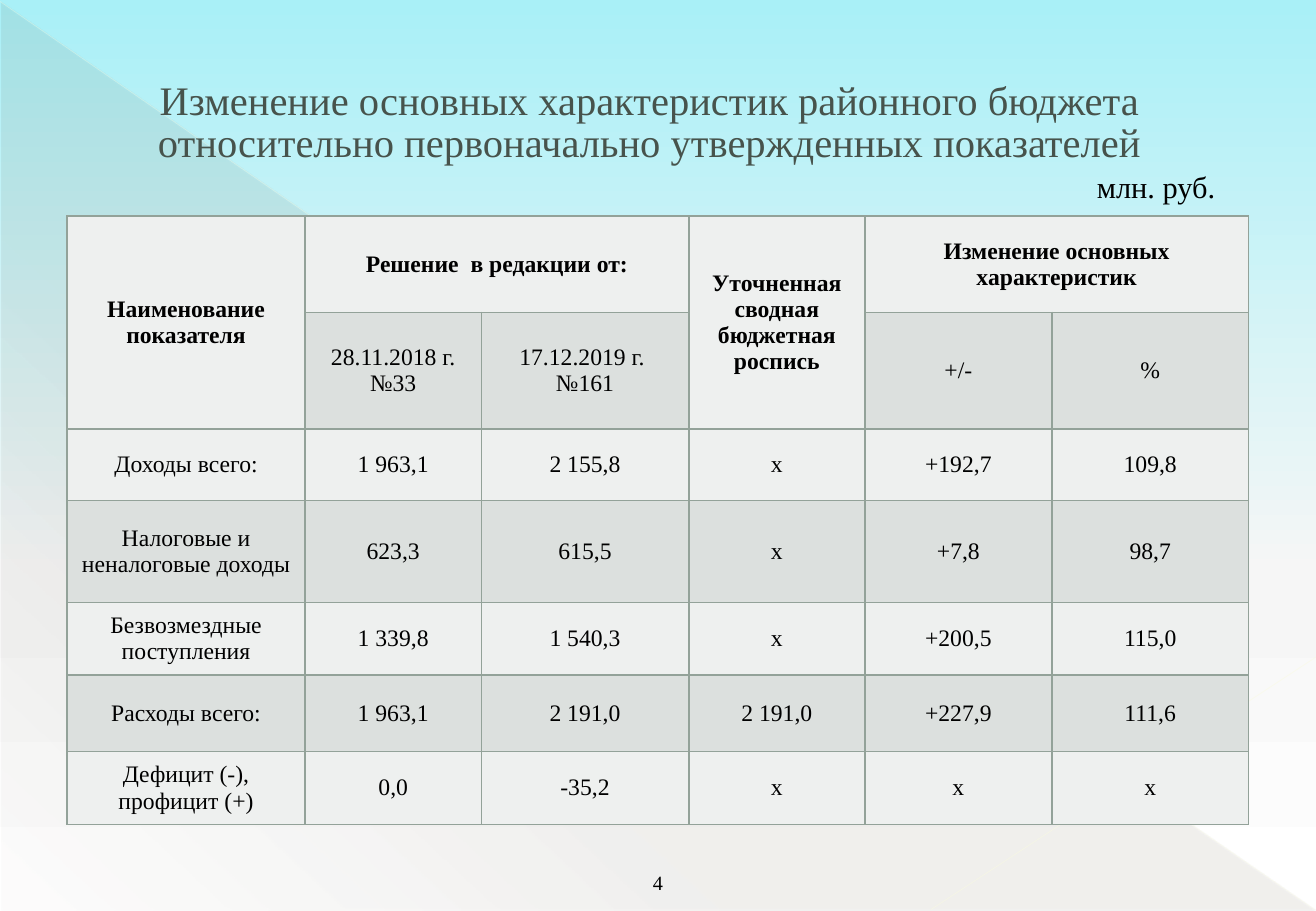
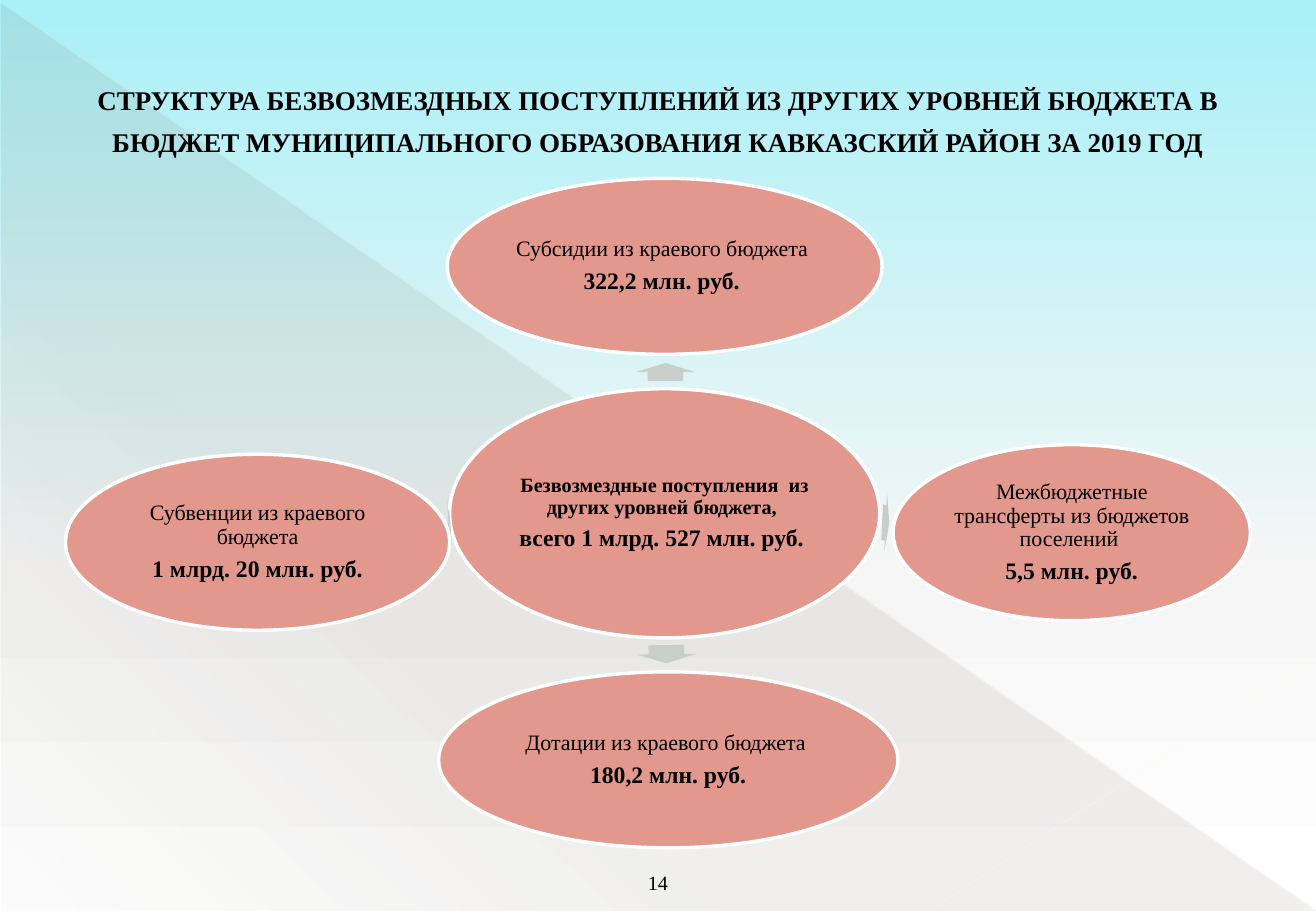
from pptx import Presentation
from pptx.dml.color import RGBColor
from pptx.enum.shapes import MSO_CONNECTOR, MSO_SHAPE
from pptx.enum.text import MSO_ANCHOR, MSO_AUTO_SIZE, PP_ALIGN
from pptx.oxml import parse_xml
from pptx.oxml.ns import nsdecls
from pptx.oxml.xmlchemy import OxmlElement
from pptx.util import Cm, Pt

FONT = "Times New Roman"
BLACK = RGBColor(0x00, 0x00, 0x00)
WHITE = RGBColor(0xFF, 0xFF, 0xFF)
SLATE = RGBColor(0x47, 0x53, 0x4C)
BORDER = RGBColor(0x93, 0xA2, 0x99)
ROW_FILLS = (RGBColor(0xEE, 0xF0, 0xEF), RGBColor(0xDC, 0xE0, 0xDE))
CORAL = RGBColor(0xE2, 0x98, 0x8C)
ARROW = RGBColor(0xC8, 0xCE, 0xCA)
CREAM = RGBColor(0xFB, 0xFC, 0xE0)
BROWN = RGBColor(0x56, 0x4B, 0x3C)
SKY = RGBColor(0xA9, 0xF0, 0xF7)
MIST = RGBColor(0xF6, 0xF6, 0xF6)

COLUMN_WIDTHS = (4.98, 3.68, 4.34, 3.68, 3.91, 4.11)
ROW_HEIGHTS = (2.01, 2.43, 1.5, 2.13, 1.52, 1.6, 1.52)
MERGES = (((0, 0), (1, 0)), ((0, 1), (0, 2)), ((0, 3), (1, 3)), ((0, 4), (0, 5)))
BUDGET_ROWS = (
    ("Наименование показателя", "Решение  в редакции от:", "",
     "Уточненная сводная бюджетная роспись", "Изменение основных характеристик", ""),
    ("", "28.11.2018 г. №33", "17.12.2019 г. \n№161", "", "+/-", "%"),
    ("Доходы всего:", "1 963,1", "2 155,8", "х", "+192,7", "109,8"),
    ("Налоговые и неналоговые доходы", "623,3", "615,5", "х", "+7,8", "98,7"),
    ("Безвозмездные поступления", "1 339,8", "1 540,3", "х", "+200,5", "115,0"),
    ("Расходы всего:", "1 963,1", "2 191,0", "2 191,0", "+227,9", "111,6"),
    ("Дефицит (-), профицит (+)", "0,0", "-35,2", "х", "х", "х"),
)

# Place, caption, amount
SOURCES = (
    ((9.35, 3.73, 9.09, 3.68), "Субсидии из краевого бюджета ", "322,2 млн. руб. "),
    ((18.67, 9.3, 7.47, 3.68), "Межбюджетные трансферты из бюджетов поселений ",
     "5,5 млн. руб."),
    ((9.17, 14.05, 9.6, 3.68), "Дотации из краевого бюджета ", "180,2 млн. руб."),
    ((1.37, 9.5, 8.03, 3.68), "Субвенции из краевого бюджета", "1 млрд. 20 млн. руб."),
)
# Place, rotation
ARROWS = (
    ((13.72, 7.16, 0.38, 1.24), 270),
    ((18.44, 10.31, 0.15, 1.24), 2.7),
    ((13.74, 13.06, 0.38, 1.24), 89.2),
    ((9.37, 10.41, 0.05, 1.24), 175.9),
)


def lengths(place):
    return [Cm(value) for value in place]


def style_para(para, size, color=BLACK, bold=False, align=PP_ALIGN.CENTER):
    para.alignment = align
    for span in para.runs:
        span.font.name = FONT
        span.font.size = Pt(size)
        span.font.bold = bold
        span.font.color.rgb = color


def set_gradient(fill, holder, stops, angle):
    """Fill with (position %, colour, opacity %) stops."""
    fill.gradient()
    stop_xml = "".join(
        f'<a:gs pos="{position * 1000}"><a:srgbClr val="{color}">'
        f'<a:alpha val="{opacity * 1000}"/></a:srgbClr></a:gs>'
        for position, color, opacity in stops)
    gradient = holder.xpath(".//a:gradFill")[0]
    gradient.getparent().replace(gradient, parse_xml(
        f'<a:gradFill {nsdecls("a")} rotWithShape="1"><a:gsLst>{stop_xml}</a:gsLst>'
        f'<a:lin ang="{angle * 60000}" scaled="0"/></a:gradFill>'))


def add_preset(slide, kind, place):
    shape = slide.shapes.add_shape(kind, *lengths(place))
    shape.shadow.inherit = False
    shape.line.fill.background()
    return shape


def add_glint(slide, ends, width, opacity):
    """Draw a faint translucent line."""
    glint = slide.shapes.add_connector(MSO_CONNECTOR.STRAIGHT, *lengths(ends))
    glint.line.color.rgb = CREAM
    glint.line.width = Pt(width)
    alpha = OxmlElement("a:alpha")
    alpha.set("val", str(opacity * 1000))
    glint.element.xpath(".//a:ln//a:srgbClr")[0].append(alpha)
    glint.element.spPr.append(OxmlElement("a:effectLst"))
    return glint


def set_backdrop(deck, layout, slide):
    """Draw the shared decoration on a slide, then move it into the layout."""
    master = deck.slide_master
    set_gradient(master.background.fill, master.element,
                 ((0, SKY, 100), (63, MIST, 100), (100, WHITE, 100)), 90)
    triangle = add_preset(slide, MSO_SHAPE.RIGHT_TRIANGLE, (0.03, 0.05, 27.48, 19))
    set_gradient(triangle.fill, triangle.element.spPr,
                 ((0, BROWN, 10), (70, BROWN, 8), (100, BROWN, 1)), 133)
    decoration = (triangle,
                  add_glint(slide, (0, 0.03, 27.48, 19.02), 0.39, 35),
                  add_glint(slide, (27.51, 13.74, 19.46, 19.02), 0.47, 45))
    tree = layout.shapes.element
    for index, shape in enumerate(decoration, 2):
        tree.insert(index, shape.element)
    for number, record in enumerate(tree.xpath(".//p:cNvPr"), 1):
        record.set("id", str(number))


def set_title(slide, text, place, size, color, bold=False):
    title = slide.shapes.title
    title.left, title.top, title.width, title.height = lengths(place)
    frame = title.text_frame
    frame.text = text
    frame.auto_size = MSO_AUTO_SIZE.NONE
    frame.vertical_anchor = MSO_ANCHOR.MIDDLE
    para = frame.paragraphs[0]
    para.line_spacing = Pt(25)
    style_para(para, size, color, bold)


def add_label(slide, text, place, size, align, anchor=MSO_ANCHOR.TOP):
    frame = slide.shapes.add_textbox(*lengths(place)).text_frame
    frame.word_wrap = True
    frame.vertical_anchor = anchor
    frame.text = text
    style_para(frame.paragraphs[0], size, align=align)


def add_page_number(slide, number):
    add_label(slide, str(number), (13.21, 17.81, 1.09, 1.02), 12,
              PP_ALIGN.CENTER, MSO_ANCHOR.BOTTOM)


def format_cell(cell, fill, bold):
    properties = cell._tc.get_or_add_tcPr()
    for side in ("lnL", "lnR", "lnT", "lnB"):
        properties.append(parse_xml(
            f'<a:{side} {nsdecls("a")} w="{Pt(1)}"><a:solidFill>'
            f'<a:srgbClr val="{BORDER}"/></a:solidFill></a:{side}>'))
    cell.fill.solid()
    cell.fill.fore_color.rgb = fill
    cell.vertical_anchor = MSO_ANCHOR.MIDDLE
    cell.margin_left = cell.margin_right = Cm(0.28)
    for para in cell.text_frame.paragraphs:
        style_para(para, 14, bold=bold)


def add_budget_table(slide):
    place = (1.4, 4.52, sum(COLUMN_WIDTHS), sum(ROW_HEIGHTS))
    table = slide.shapes.add_table(
        len(ROW_HEIGHTS), len(COLUMN_WIDTHS), *lengths(place)).table
    table.first_row = table.horz_banding = False
    for column, width in zip(table.columns, COLUMN_WIDTHS):
        column.width = Cm(width)
    for index, (height, texts) in enumerate(zip(ROW_HEIGHTS, BUDGET_ROWS)):
        table.rows[index].height = Cm(height)
        for cell, text in zip(table.rows[index].cells, texts):
            cell.text = text
            format_cell(cell, ROW_FILLS[index % 2], index == 0)
    for first, last in MERGES:
        table.cell(*first).merge(table.cell(*last))


def add_bubble(slide, place, caption, amount, caption_size=13, caption_bold=False):
    bubble = add_preset(slide, MSO_SHAPE.OVAL, place)
    bubble.fill.solid()
    bubble.fill.fore_color.rgb = CORAL
    bubble.line.color.rgb = WHITE
    bubble.line.width = Pt(2)
    frame = bubble.text_frame
    frame.word_wrap = True
    frame.vertical_anchor = MSO_ANCHOR.MIDDLE
    frame.margin_left = frame.margin_right = Cm(0.05)
    frame.margin_top = frame.margin_bottom = Cm(0.05)
    frame.text = f"{caption}\n{amount}"
    for para in frame.paragraphs:
        para.line_spacing = 0.9
        para.space_after = Pt(4.5)
    style_para(frame.paragraphs[0], caption_size, bold=caption_bold)
    style_para(frame.paragraphs[1], 14, bold=True)


def add_arrow(slide, place, rotation):
    arrow = add_preset(slide, MSO_SHAPE.RIGHT_ARROW, place)
    arrow.rotation = rotation
    arrow.adjustments[0] = 0.6
    arrow.adjustments[1] = 0.5
    arrow.fill.solid()
    arrow.fill.fore_color.rgb = ARROW


def fill_changes_slide(slide):
    set_title(slide, "Изменение основных характеристик районного бюджета "
              "относительно первоначально утвержденных показателей",
              (1.19, 0.91, 24.77, 3.33), 24, SLATE)
    add_budget_table(slide)
    add_page_number(slide, 4)
    add_label(slide, "млн. руб.", (22.68, 3.4, 4.11, 1.02), 18, PP_ALIGN.LEFT)


def fill_structure_slide(slide):
    set_title(slide, "СТРУКТУРА БЕЗВОЗМЕЗДНЫХ ПОСТУПЛЕНИЙ ИЗ ДРУГИХ УРОВНЕЙ БЮДЖЕТА "
              "В БЮДЖЕТ МУНИЦИПАЛЬНОГО ОБРАЗОВАНИЯ КАВКАЗСКИЙ РАЙОН ЗА 2019 ГОД",
              (1.37, 1.32, 24.77, 2.21), 16, BLACK, bold=True)
    add_bubble(slide, (9.4, 8.13, 8.99, 5.21),
               "Безвозмездные поступления  из других уровней бюджета, ",
               "всего 1 млрд. 527 млн. руб. ", caption_size=12, caption_bold=True)
    for arrow, source in zip(ARROWS, SOURCES):
        add_arrow(slide, *arrow)
        add_bubble(slide, *source)
    add_page_number(slide, 14)


def main():
    deck = Presentation()
    deck.slide_width, deck.slide_height = Cm(27.51), Cm(19.05)
    layout = deck.slide_layouts[5]
    changes = deck.slides.add_slide(layout)
    set_backdrop(deck, layout, changes)
    fill_changes_slide(changes)
    fill_structure_slide(deck.slides.add_slide(layout))
    deck.save("out.pptx")


if __name__ == "__main__":
    main()
